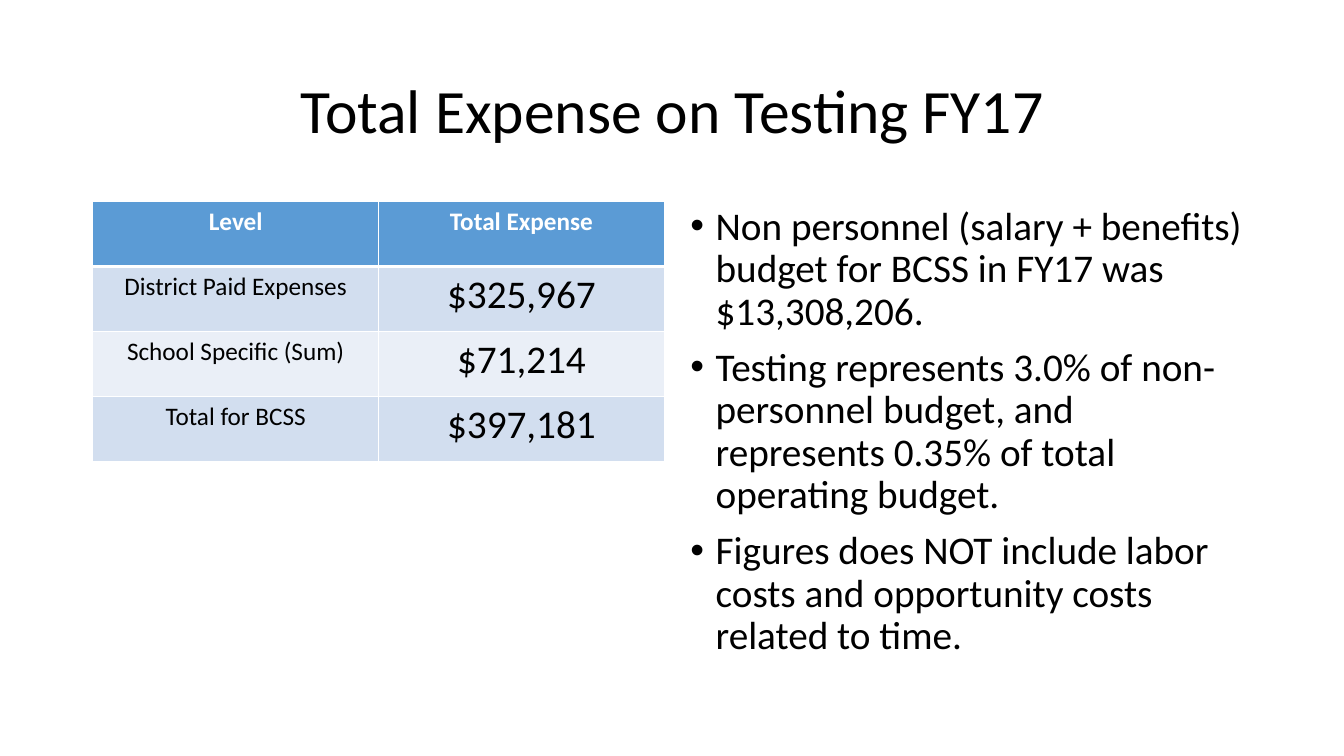
from lxml import etree
from pptx import Presentation
from pptx.dml.color import RGBColor
from pptx.enum.text import MSO_ANCHOR as Anchor, PP_ALIGN as Align
from pptx.oxml.ns import qn
from pptx.util import Inches, Pt

COLORS = {
    "text": "000000",
    "white": "FFFFFF",
    "header": "5B9BD5",
    "band_dark": "D2DEEF",
    "band_light": "EAEFF7",
}


def add_run(para, text, size, color="text", bold=False):
    span = para.add_run()
    span.text = text
    span.font.name = "Calibri"
    span.font.size = Pt(size)
    span.font.bold = bold
    span.font.color.rgb = RGBColor.from_string(COLORS[color])


def add_border(cell, side, width):
    line = etree.Element(qn(f"a:ln{side}"), w=str(Pt(width)))
    fill = etree.SubElement(line, qn("a:solidFill"))
    etree.SubElement(fill, qn("a:srgbClr"), val=COLORS["white"])
    # Border lines come before the cell's fill
    properties = cell._tc.get_or_add_tcPr()
    properties.find(qn("a:solidFill")).addprevious(line)


deck = Presentation()
deck.slide_width = Inches(13.33)
deck.slide_height = Inches(7.5)
page = deck.slides.add_slide(deck.slide_layouts[6])

# Title
title = page.shapes.add_textbox(Inches(0.92), Inches(0.4), Inches(11.5), Inches(1.45))
title.text_frame.word_wrap = True
title.text_frame.vertical_anchor = Anchor.MIDDLE
para = title.text_frame.paragraphs[0]
para.alignment = Align.CENTER
para.line_spacing = 0.9
add_run(para, "Total Expense on Testing FY17", 44)

# Expense table
expenses = [
    ("Level", "Total Expense"),
    ("District Paid Expenses", "$325,967"),
    ("School Specific (Sum)", "$71,214"),
    ("Total for BCSS", "$397,181"),
]
table = page.shapes.add_table(
    len(expenses), 2, Inches(0.92), Inches(2), Inches(5.67), Inches(2.58)
).table
for row, values in enumerate(expenses):
    is_header = row == 0
    band = "header" if is_header else "band_dark" if row % 2 else "band_light"
    for column, value in enumerate(values):
        cell = table.cell(row, column)
        cell.margin_left = cell.margin_right = Inches(0.06)
        cell.margin_top = cell.margin_bottom = Inches(0.05)
        cell.fill.solid()
        cell.fill.fore_color.rgb = RGBColor.from_string(COLORS[band])
        for side in "LRTB":
            under_header = (row, side) in [(0, "B"), (1, "T")]
            add_border(cell, side, 3 if under_header else 1)
        para = cell.text_frame.paragraphs[0]
        para.alignment = Align.CENTER
        size = 28 if column == 1 and not is_header else 18
        add_run(para, value, size, "white" if is_header else "text", is_header)

# Bulleted remarks
remarks = [
    "Non personnel (salary + benefits) budget for BCSS in FY17 was $13,308,206.",
    "Testing represents 3.0% of non-personnel budget, and represents 0.35% of total operating budget.",
    "Figures does NOT include labor costs and opportunity costs related to time.",
]
box = page.shapes.add_textbox(Inches(6.75), Inches(2), Inches(5.67), Inches(4.76))
frame = box.text_frame
frame.word_wrap = True
for index, remark in enumerate(remarks):
    para = frame.add_paragraph() if index else frame.paragraphs[0]
    para.line_spacing = 0.9
    para.space_before = Pt(10)
    properties = para._p.get_or_add_pPr()
    properties.set("marL", str(Inches(0.25)))
    properties.set("indent", str(-Inches(0.25)))
    etree.SubElement(properties, qn("a:buFont"), typeface="Arial")
    etree.SubElement(properties, qn("a:buChar"), char="•")
    add_run(para, remark, 28)

deck.save("out.pptx")
